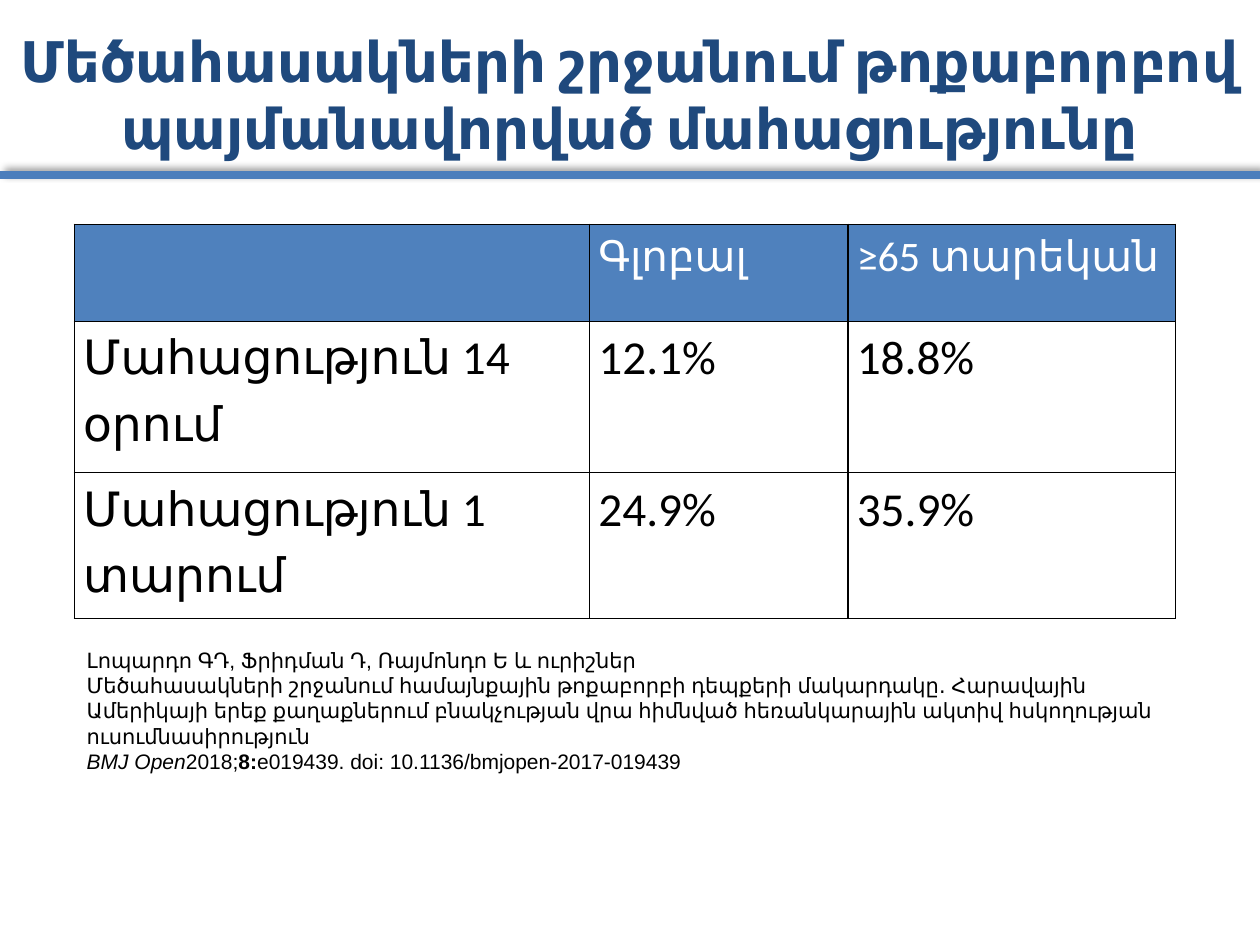
"""Build a slide on pneumonia mortality in adults: title, rule, table and citation."""
from dataclasses import dataclass
from typing import Optional

import lxml.etree
import pptx
import pptx.dml.color
import pptx.enum.shapes
import pptx.enum.text
import pptx.oxml
import pptx.oxml.ns
import pptx.util

RGBColor = pptx.dml.color.RGBColor
NAVY = RGBColor(0x1F, 0x49, 0x7D)
RULE_BLUE = RGBColor(0x4B, 0x7E, 0xBC)
HEADER_BLUE = RGBColor(0x4F, 0x81, 0xBD)
WHITE = RGBColor(0xFF, 0xFF, 0xFF)
BLACK = RGBColor(0x00, 0x00, 0x00)

WIDTH = pptx.util.Inches(10)
HEIGHT = pptx.util.Inches(7.5)
MARGIN = 0.059
CONTENT = 0.874
COLUMN_SHARES = (4.09, 2.05, 2.6)
ROW_HEIGHTS = (0.77, 1.2, 1.16)
ROWS = (
    ("", "Գլոբալ", "≥65 տարեկան"),
    ("Մահացություն 14 օրում", "12.1%", "18.8%"),
    ("Մահացություն 1 տարում", "24.9%", "35.9%"),
)


@dataclass(frozen=True)
class Area:
    """A rectangle in shares of the slide's size."""
    left: float
    top: float
    width: float
    height: float

    def lengths(self) -> tuple:
        """Return the rectangle as slide lengths."""
        return (round(self.left * WIDTH), round(self.top * HEIGHT),
                round(self.width * WIDTH), round(self.height * HEIGHT))


@dataclass(frozen=True)
class Style:
    """The look of a piece of text."""
    font: str
    size: float
    color: RGBColor
    bold: bool = False
    italic: bool = False


@dataclass(frozen=True)
class Span:
    """A stretch of text in one style."""
    text: str
    style: Style


TITLE = Style("Calibri", 32, NAVY, bold=True)
HEADER = Style("Calibri", 24, WHITE)
BODY = Style("Calibri", 27, BLACK)
SOURCE = Style("Arial", 12, BLACK)
JOURNAL = Style("Arial", 12, BLACK, italic=True)
VOLUME = Style("Arial", 12, BLACK, bold=True)

CITATION = (
    (Span("Լոպարդո ԳԴ, Ֆրիդման Դ, Ռայմոնդո Ե և ուրիշներ", SOURCE),),
    (Span("Մեծահասակների շրջանում համայնքային թոքաբորբի դեպքերի մակարդակը․ "
          "Հարավային Ամերիկայի երեք քաղաքներում բնակչության վրա հիմնված "
          "հեռանկարային ակտիվ հսկողության ուսումնասիրություն", SOURCE),),
    (Span("BMJ Open", JOURNAL), Span("2018;", SOURCE), Span("8:", VOLUME),
     Span("e019439. doi: 10.1136/bmjopen-2017-019439", SOURCE)),
)


def apply_style(font, style: Style) -> None:
    """Give a font the look of a style."""
    font.name = style.font
    font.size = pptx.util.Pt(style.size)
    font.bold = style.bold
    font.italic = style.italic
    font.color.rgb = style.color


def write(frame, lines: tuple, align=None, spacing: Optional[float] = None) -> None:
    """Fill a text frame with paragraphs of spans."""
    for index, spans in enumerate(lines):
        para = frame.add_paragraph() if index else frame.paragraphs[0]
        para.alignment = align
        para.line_spacing = spacing
        for span in spans:
            run = para.add_run()
            run.text = span.text
            apply_style(run.font, span.style)


def add_text(page, area: Area, lines: tuple, align=None,
             anchor=pptx.enum.text.MSO_ANCHOR.TOP):
    """Add a wrapping text box and return its frame."""
    frame = page.shapes.add_textbox(*area.lengths()).text_frame
    frame.word_wrap = True
    frame.vertical_anchor = anchor
    write(frame, lines, align)
    return frame


def add_rule(page, level: float) -> None:
    """Add a shadowed line across the whole slide."""
    y = round(level * HEIGHT)
    rule = page.shapes.add_connector(
        pptx.enum.shapes.MSO_CONNECTOR.STRAIGHT, 0, y, WIDTH, y)
    rule.line.color.rgb = RULE_BLUE
    rule.line.width = pptx.util.Pt(5)
    tag = pptx.oxml.ns.qn
    properties = rule.element.find(tag("p:spPr"))
    effects = lxml.etree.SubElement(properties, tag("a:effectLst"))
    shadow = lxml.etree.SubElement(
        effects, tag("a:outerShdw"), blurRad=str(pptx.util.Pt(4)),
        dist=str(pptx.util.Pt(3)), dir=str(315 * 60000), rotWithShape="0")
    color = lxml.etree.SubElement(shadow, tag("a:srgbClr"), val=str(BLACK))
    lxml.etree.SubElement(color, tag("a:alpha"), val="40000")


def add_borders(cell) -> None:
    """Draw a thin black line on each side of a cell."""
    tag = pptx.oxml.ns.qn
    properties = cell._tc.get_or_add_tcPr()
    for side in ("a:lnL", "a:lnR", "a:lnT", "a:lnB"):
        line = lxml.etree.SubElement(properties, tag(side), w=str(pptx.util.Pt(1)))
        fill = lxml.etree.SubElement(line, tag("a:solidFill"))
        lxml.etree.SubElement(fill, tag("a:srgbClr"), val=str(BLACK))


def fill_cell(cell, text: str, is_header: bool) -> None:
    """Style one table cell and write its text."""
    add_borders(cell)
    cell.margin_left = cell.margin_right = pptx.util.Inches(0.07)
    cell.margin_top = cell.margin_bottom = 0
    if is_header:
        cell.fill.solid()
        cell.fill.fore_color.rgb = HEADER_BLUE
    else:
        cell.fill.background()
    if text:
        style = HEADER if is_header else BODY
        write(cell.text_frame, ((Span(text, style),),), spacing=1.15)


def add_mortality_table(page, area: Area) -> None:
    """Add the table of mortality by period and age."""
    left, top, width, height = area.lengths()
    table = page.shapes.add_table(
        len(ROWS), len(COLUMN_SHARES), left, top, width, height).table
    table.first_row = table.horz_banding = False
    for column, share in zip(table.columns, COLUMN_SHARES):
        column.width = round(width * share / sum(COLUMN_SHARES))
    for row, share in zip(table.rows, ROW_HEIGHTS):
        row.height = round(height * share / sum(ROW_HEIGHTS))
    for r, texts in enumerate(ROWS):
        for c, text in enumerate(texts):
            fill_cell(table.cell(r, c), text, is_header=r == 0)


def main() -> None:
    """Build and save the deck."""
    deck = pptx.Presentation()
    deck.slide_width, deck.slide_height = WIDTH, HEIGHT
    page = deck.slides.add_slide(deck.slide_layouts[6])
    add_rule(page, 1.39 / 7.5)
    title = Span("Մեծահասակների շրջանում թոքաբորբով պայմանավորված մահացությունը", TITLE)
    add_text(page, Area(0, 0.13 / 7.5, 1, 1.23 / 7.5), ((title,),),
             pptx.enum.text.PP_ALIGN.CENTER, pptx.enum.text.MSO_ANCHOR.MIDDLE)
    add_mortality_table(page, Area(MARGIN, 1.78 / 7.5, CONTENT, 3.13 / 7.5))
    source = add_text(page, Area(MARGIN, 5.09 / 7.5, CONTENT, 0.91 / 7.5), CITATION)
    source.auto_size = pptx.enum.text.MSO_AUTO_SIZE.SHAPE_TO_FIT_TEXT
    deck.save("out.pptx")


if __name__ == "__main__":
    main()
